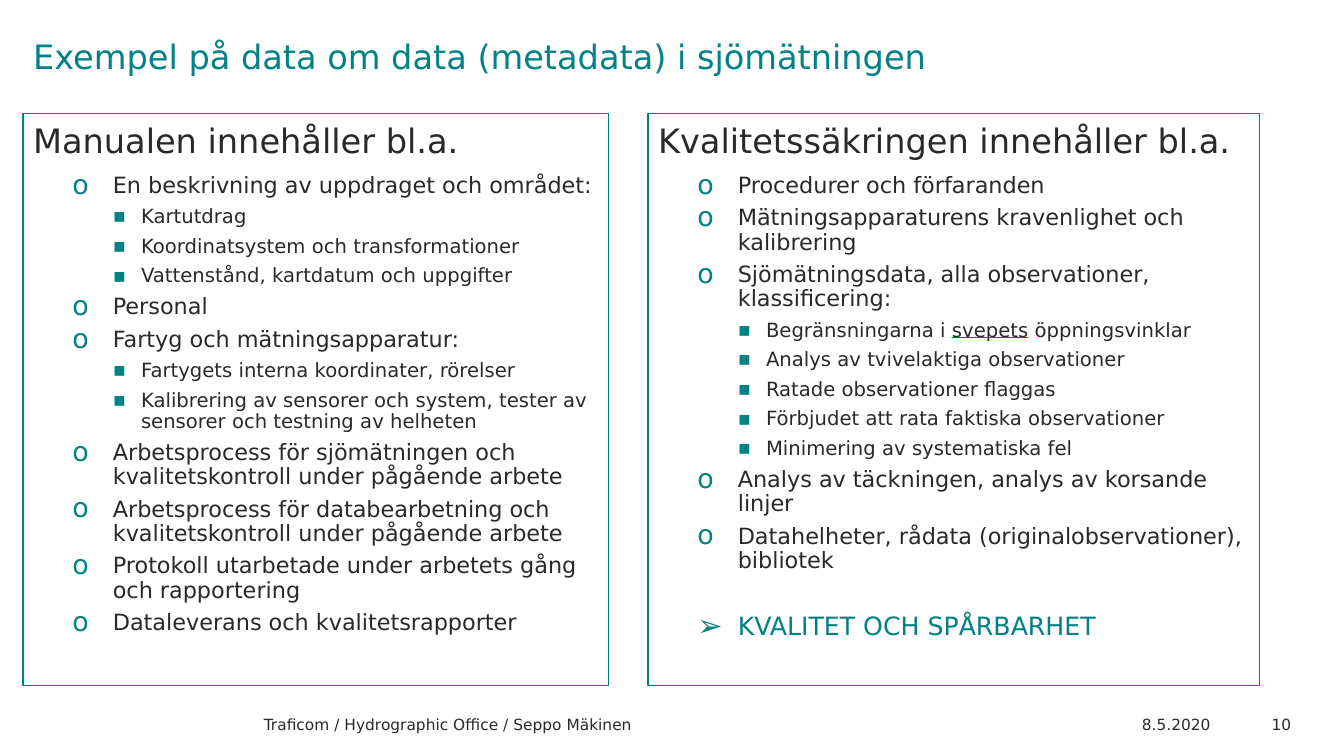
"""Builds the slide on metadata in hydrographic surveying."""
from dataclasses import dataclass

from lxml.etree import SubElement
from pptx import Presentation
from pptx.dml.color import RGBColor
from pptx.enum.text import MSO_ANCHOR, MSO_AUTO_SIZE, PP_ALIGN
from pptx.oxml.ns import qn
from pptx.util import Cm, Pt


@dataclass(frozen=True)
class Theme:
    """Colours, font and type sizes in one place."""
    font: str = "DejaVu Sans"
    ink: str = "292929"
    teal: str = "018285"
    frame: str = "008080"
    alert: str = "FF0000"
    heading: int = 24
    topic: int = 16
    detail: int = 14
    conclusion: int = 18
    footer: int = 11


@dataclass(frozen=True)
class Level:
    """Look of one list level, with indents in centimetres."""
    depth: int
    size: int
    color: str
    bullet: str = ""
    left: float = 0
    hanging: float = 0
    bullet_scale: int = 100
    spacing: float = 0.9
    before: int = 0
    after: int = 6


THEME = Theme()
LEVELS = {
    "heading": Level(0, THEME.heading, THEME.ink, spacing=1.04, after=10),
    "topic": Level(1, THEME.topic, THEME.ink, "o", 2.01, 1.02, 120),
    "detail": Level(2, THEME.detail, THEME.ink, "▪", 2.72, 0.71),
    "conclusion": Level(1, THEME.conclusion, THEME.frame, "➢", 2.01, 1.02, 120, before=23),
}

MANUAL = [
    ("heading", "Manualen innehåller bl.a."),
    ("topic", "En beskrivning av uppdraget och området:"),
    ("detail", "Kartutdrag"),
    ("detail", "Koordinatsystem och transformationer"),
    ("detail", "Vattenstånd, kartdatum och uppgifter"),
    ("topic", "Personal"),
    ("topic", "Fartyg och mätningsapparatur:"),
    ("detail", "Fartygets interna koordinater, rörelser"),
    ("detail", "Kalibrering av sensorer och system, tester av sensorer och testning av helheten"),
    ("topic", "Arbetsprocess för sjömätningen och kvalitetskontroll under pågående arbete"),
    ("topic", "Arbetsprocess för databearbetning och kvalitetskontroll under pågående arbete"),
    ("topic", "Protokoll utarbetade under arbetets gång och rapportering"),
    ("topic", "Dataleverans och kvalitetsrapporter"),
]
QUALITY = [
    ("heading", "Kvalitetssäkringen innehåller bl.a."),
    ("topic", "Procedurer och förfaranden"),
    ("topic", "Mätningsapparaturens kravenlighet och kalibrering"),
    ("topic", "Sjömätningsdata, alla observationer, klassificering:"),
    ("detail", "Begränsningarna i ", "svepets", " öppningsvinklar"),
    ("detail", "Analys av tvivelaktiga observationer"),
    ("detail", "Ratade observationer flaggas"),
    ("detail", "Förbjudet att rata faktiska observationer"),
    ("detail", "Minimering av systematiska fel"),
    ("topic", "Analys av täckningen, analys av korsande linjer"),
    ("topic", "Datahelheter, rådata (originalobservationer), bibliotek"),
    ("conclusion", "KVALITET OCH SPÅRBARHET"),
]


class SlideBuilder:
    """Holds the theme and the current slide."""

    def __init__(self, slide, theme):
        """Keep the slide and its style."""
        self.slide = slide
        self.theme = theme

    def place(self, holder, left, top, width, height, anchor=MSO_ANCHOR.TOP):
        """Move a text holder and return its prepared frame."""
        holder.left, holder.top = Cm(left), Cm(top)
        holder.width, holder.height = Cm(width), Cm(height)
        frame = holder.text_frame
        frame.word_wrap = True
        frame.auto_size = MSO_AUTO_SIZE.NONE
        frame.vertical_anchor = anchor
        return frame

    def add_text(self, paragraph, text, size, color):
        """Add one styled run to a paragraph."""
        run = paragraph.add_run()
        run.text = text
        run.font.name = self.theme.font
        run.font.size = Pt(size)
        run.font.color.rgb = RGBColor.from_string(color)
        return run

    def title(self, text, *box):
        """Fill the title placeholder."""
        paragraph = self.place(self.slide.shapes.title, *box).paragraphs[0]
        paragraph.alignment = PP_ALIGN.LEFT
        paragraph.line_spacing = 0.9
        self.add_text(paragraph, text, self.theme.heading, self.theme.teal)

    def bullet(self, paragraph, level):
        """Set the indents and bullet of a paragraph."""
        properties = paragraph._p.get_or_add_pPr()
        properties.set("marL", str(Cm(level.left)))
        properties.set("indent", str(-Cm(level.hanging)))
        if not level.bullet:
            SubElement(properties, qn("a:buNone"))
            return
        tint = SubElement(properties, qn("a:buClr"))
        SubElement(tint, qn("a:srgbClr"), val=self.theme.teal)
        SubElement(properties, qn("a:buSzPct"), val=str(level.bullet_scale * 1000))
        SubElement(properties, qn("a:buFont"), typeface=self.theme.font)
        SubElement(properties, qn("a:buChar"), char=level.bullet)

    def underline(self, run):
        """Underline a run in the alert colour."""
        run.font.underline = True
        ink = run._r.get_or_add_rPr().find(qn("a:solidFill"))
        line = ink.makeelement(qn("a:uFill"), {})
        ink.addnext(line)
        fill = SubElement(line, qn("a:solidFill"))
        SubElement(fill, qn("a:srgbClr"), val=self.theme.alert)

    def panel(self, index, entries, *box):
        """Fill a framed body placeholder with a list."""
        holder = self.slide.placeholders[index]
        holder.line.color.rgb = RGBColor.from_string(self.theme.frame)
        holder.line.width = Pt(0.75)
        frame = self.place(holder, *box)
        for position, (kind, *parts) in enumerate(entries):
            level = LEVELS[kind]
            paragraph = frame.add_paragraph() if position else frame.paragraphs[0]
            paragraph.level = level.depth
            self.bullet(paragraph, level)
            paragraph.line_spacing = level.spacing
            paragraph.space_before = Pt(level.before)
            paragraph.space_after = Pt(level.after)
            for part in parts:
                run = self.add_text(paragraph, part, level.size, level.color)
                if part == "svepets":
                    self.underline(run)

    def footer(self, text, left, width, alignment):
        """Add a text to the footer line."""
        box = self.slide.shapes.add_textbox(0, 0, 0, 0)
        frame = self.place(box, left, 17.75, width, 1, MSO_ANCHOR.MIDDLE)
        frame.paragraphs[0].alignment = alignment
        self.add_text(frame.paragraphs[0], text, self.theme.footer, self.theme.ink)


def main():
    """Build and save the slide."""
    deck = Presentation()
    deck.slide_width, deck.slide_height = Cm(33.87), Cm(19.05)
    builder = SlideBuilder(deck.slides.add_slide(deck.slide_layouts[3]), THEME)
    builder.title("Exempel på data om data (metadata) i sjömätningen", 0.58, 0.89, 31.5, 1.55)
    builder.panel(1, MANUAL, 0.58, 2.85, 14.75, 14.43)
    builder.panel(2, QUALITY, 16.33, 2.85, 15.42, 14.43)
    builder.footer("Traficom / Hydrographic Office / Seppo Mäkinen", 6.4, 11.43, PP_ALIGN.LEFT)
    builder.footer("8.5.2020", 23.14, 7.62, PP_ALIGN.RIGHT)
    builder.footer("10", 31.39, 1.4, PP_ALIGN.RIGHT)
    deck.save("out.pptx")


if __name__ == "__main__":
    main()
